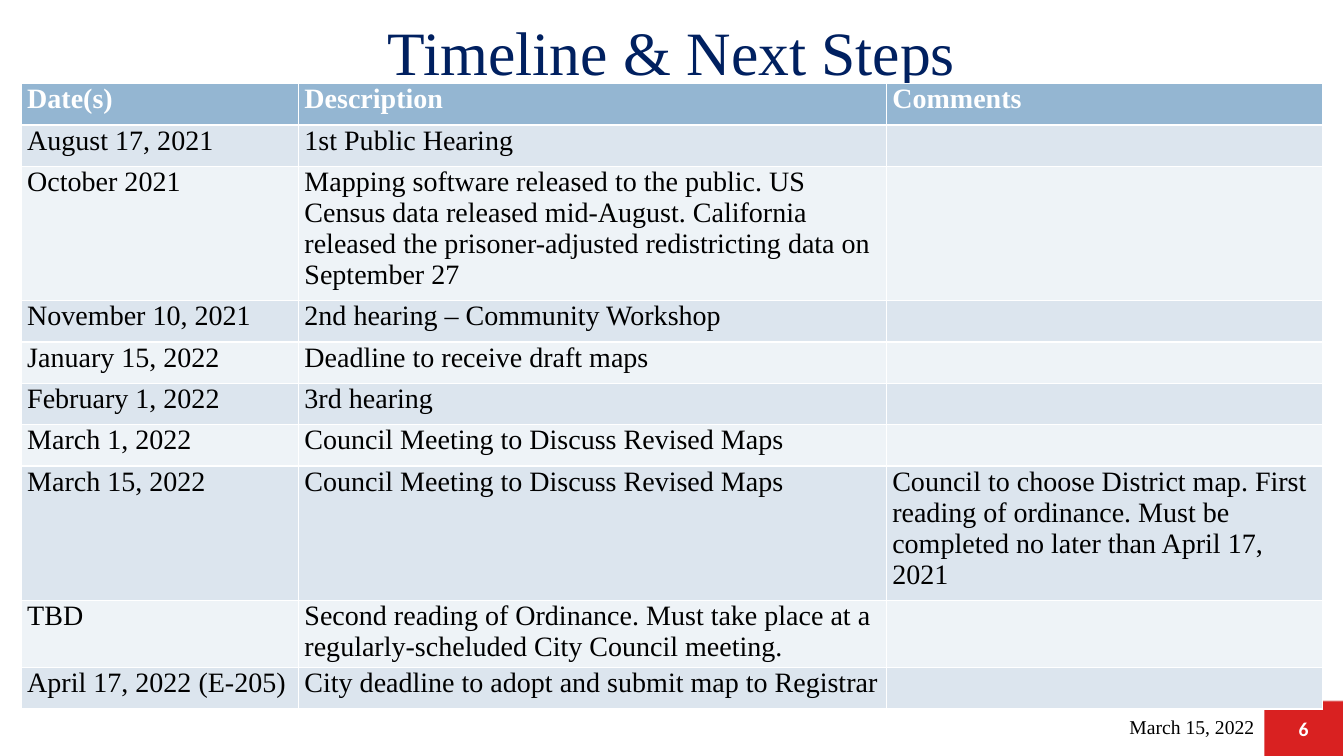
from lxml import etree
from pptx import Presentation
from pptx.dml.color import RGBColor
from pptx.enum import shapes, text
from pptx.oxml import ns
from pptx.util import Inches, Pt

NAVY = RGBColor(0x00, 0x20, 0x60)
RED = RGBColor(0xD9, 0x21, 0x21)
RULE_RED = RGBColor(0xC8, 0x00, 0x00)
HEADER_BLUE = RGBColor(0x94, 0xB6, 0xD2)
BAND_DARK = RGBColor(0xDC, 0xE5, 0xEE)
BAND_LIGHT = RGBColor(0xEE, 0xF3, 0xF7)
WHITE = RGBColor(0xFF, 0xFF, 0xFF)
BLACK = RGBColor(0x00, 0x00, 0x00)
SERIF = "Times New Roman"

COLUMN_WIDTHS = (2.75, 5.83, 4.33)
ROW_HEIGHT = 0.41
TIMELINE = [
    ("Date(s)", "Description", "Comments"),
    ("August 17, 2021", "1st Public Hearing", ""),
    ("October 2021",
     "Mapping software released to the public. US Census data released "
     "mid-August. California released the prisoner-adjusted redistricting "
     "data on September 27", ""),
    ("November 10, 2021", "2nd hearing – Community Workshop", ""),
    ("January 15, 2022", "Deadline to receive draft maps", ""),
    ("February 1, 2022", "3rd hearing", ""),
    ("March 1, 2022", "Council Meeting to Discuss Revised Maps", ""),
    ("March 15, 2022", "Council Meeting to Discuss Revised Maps",
     "Council to choose District map. First reading of ordinance. "
     "Must be completed no later than April 17, 2021"),
    ("TBD",
     "Second reading of Ordinance. Must take place at a "
     "regularly-scheluded City Council meeting.", ""),
    ("April 17, 2022 (E-205)",
     "City deadline to adopt and submit map to Registrar", ""),
]


def add_run(p, words, size, color, font=SERIF, bold=False):
    r = p.add_run()
    r.text = words
    r.font.size = Pt(size)
    r.font.name = font
    r.font.bold = bold
    r.font.color.rgb = color


def set_text(sp, words, align, size, color, **style):
    tf = sp.text_frame
    tf.word_wrap = True
    tf.vertical_anchor = text.MSO_ANCHOR.MIDDLE
    p = tf.paragraphs[0]
    p.alignment = align
    add_run(p, words, size, color, **style)


def add_text(s, box, words, align, size, color):
    sp = s.shapes.add_textbox(*map(Inches, box))
    set_text(sp, words, align, size, color)


def add_footer_rule(s):
    line = s.shapes.add_connector(
        shapes.MSO_CONNECTOR.STRAIGHT,
        Inches(1.89), Inches(6.96), Inches(13.32), Inches(6.96))
    line.line.color.rgb = RULE_RED
    line.line.width = Pt(1.25)
    # 55 % opacity, no shadow
    spPr = line._element.spPr
    color = spPr.find(".//" + ns.qn("a:srgbClr"))
    etree.SubElement(color, ns.qn("a:alpha"), val="55000")
    etree.SubElement(spPr, ns.qn("a:effectLst"))


def add_page_number(s, number):
    sp = s.shapes.add_shape(
        shapes.MSO_SHAPE.RECTANGLE,
        Inches(12.54), Inches(6.96), Inches(0.78), Inches(0.54))
    sp.shadow.inherit = False
    sp.fill.solid()
    sp.fill.fore_color.rgb = RED
    sp.line.fill.background()
    set_text(sp, number, text.PP_ALIGN.CENTER, 14, WHITE,
             font="Calibri", bold=True)


def fill_cell(cell, words, fill, color, bold):
    cell.fill.solid()
    cell.fill.fore_color.rgb = fill
    cell.margin_left = cell.margin_right = Inches(0.06)
    cell.margin_top = cell.margin_bottom = Inches(0)
    if words:
        p = cell.text_frame.paragraphs[0]
        p.space_after = Pt(6)
        add_run(p, words, 20, color, bold=bold)


def add_timeline(s):
    # The default table style supplies the white cell borders
    table = s.shapes.add_table(
        len(TIMELINE), len(COLUMN_WIDTHS), Inches(0.21), Inches(0.83),
        Inches(sum(COLUMN_WIDTHS)), Inches(ROW_HEIGHT * len(TIMELINE))).table
    for column, width in zip(table.columns, COLUMN_WIDTHS):
        column.width = Inches(width)
    for i, entry in enumerate(TIMELINE):
        table.rows[i].height = Inches(ROW_HEIGHT)
        header = i == 0
        band = BAND_DARK if i % 2 else BAND_LIGHT
        for j, words in enumerate(entry):
            fill_cell(table.cell(i, j), words,
                      HEADER_BLUE if header else band,
                      WHITE if header else BLACK, header)


def main():
    prs = Presentation()
    prs.slide_width, prs.slide_height = Inches(13.33), Inches(7.5)
    s = prs.slides.add_slide(prs.slide_layouts[6])

    # Footer band
    add_footer_rule(s)
    add_page_number(s, "6")

    # Title and date
    add_text(s, (0, 0, 13.33, 1), "Timeline & Next Steps",
             text.PP_ALIGN.CENTER, 44, NAVY)
    add_text(s, (8.65, 7.01, 3.89, 0.4), "March 15, 2022",
             text.PP_ALIGN.RIGHT, 14, BLACK)

    # Schedule
    add_timeline(s)

    prs.save("out.pptx")


if __name__ == "__main__":
    main()
